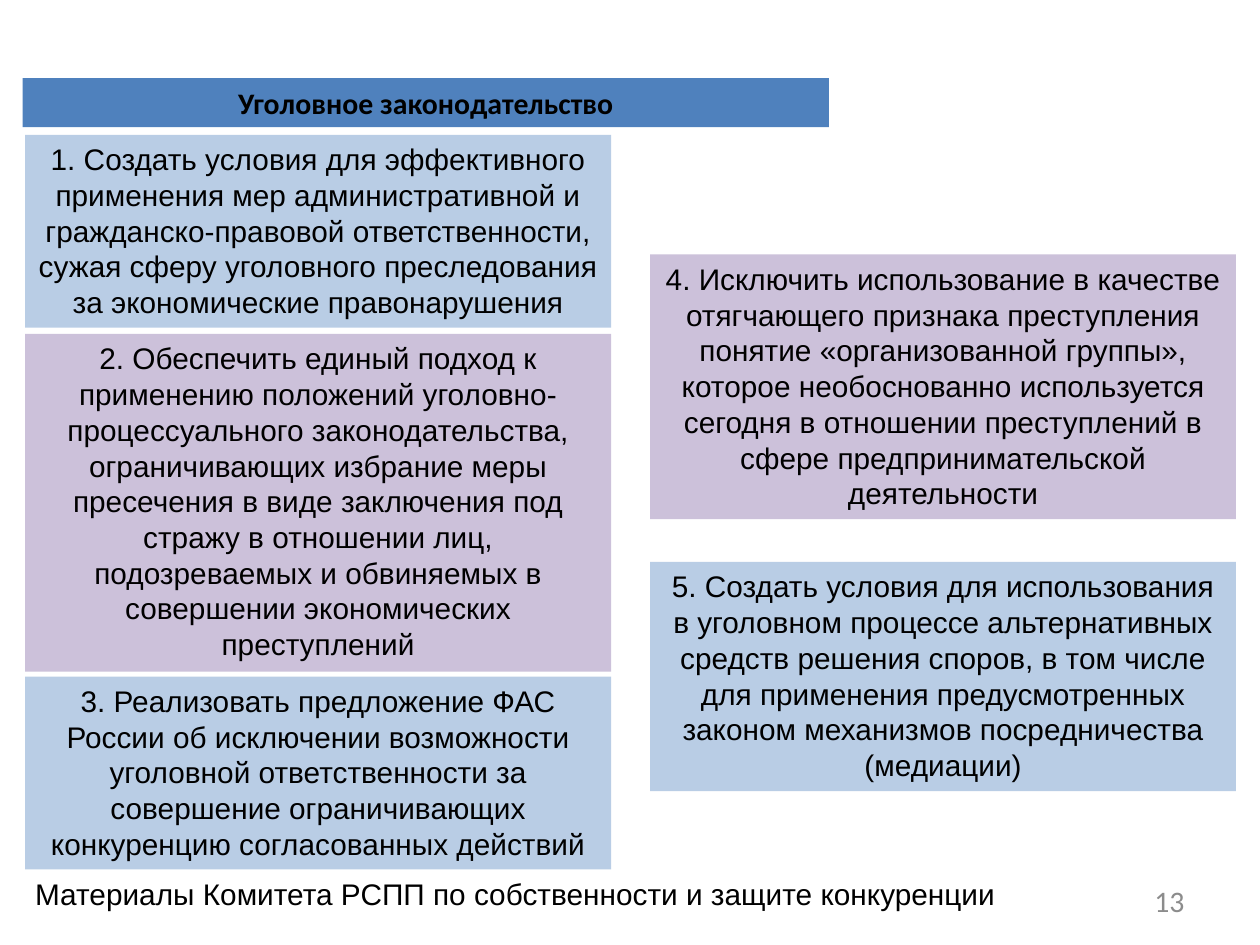
from dataclasses import dataclass
from typing import Optional

from pptx import Presentation
from pptx.dml.color import RGBColor
from pptx.enum import text
from pptx.util import Inches, Pt

BLACK = RGBColor(0x00, 0x00, 0x00)
GRAY = RGBColor(0x8C, 0x8C, 0x8C)
HEADER_BLUE = RGBColor(0x4F, 0x81, 0xBD)
LIGHT_BLUE = RGBColor(0xB9, 0xCD, 0xE5)
LILAC = RGBColor(0xCC, 0xC1, 0xDA)

CENTER = text.PP_ALIGN.CENTER
LEFT_COL, RIGHT_COL, COL_WIDTH = 0.2, 5.16, 4.65


@dataclass
class Box:
    left: float
    top: float
    width: float
    height: float
    words: str
    fill: Optional[RGBColor] = None
    align: text.PP_ALIGN = CENTER
    anchor: text.MSO_ANCHOR = text.MSO_ANCHOR.TOP
    font: str = "Arial"
    color: RGBColor = BLACK
    bold: bool = False


def proposal(left: float, top: float, height: float, fill: RGBColor, words: str) -> Box:
    return Box(left, top, COL_WIDTH, height, words, fill)


BOXES = [
    Box(0.18, 0.62, 6.4, 0.39, "Уголовное законодательство", HEADER_BLUE,
        font="Calibri", bold=True),
    proposal(LEFT_COL, 1.07, 1.53, LIGHT_BLUE,
             "1. Создать условия для эффективного применения мер административной и "
             "гражданско-правовой ответственности, сужая сферу уголовного преследования "
             "за экономические правонарушения"),
    proposal(LEFT_COL, 2.65, 2.68, LILAC,
             "2. Обеспечить единый подход к применению положений "
             "уголовно-процессуального законодательства, ограничивающих избрание меры "
             "пресечения в виде заключения под стражу в отношении лиц, подозреваемых и "
             "обвиняемых в совершении экономических преступлений"),
    proposal(LEFT_COL, 5.37, 1.53, LIGHT_BLUE,
             "3. Реализовать предложение ФАС России об исключении возможности уголовной "
             "ответственности за совершение ограничивающих конкуренцию согласованных "
             "действий"),
    proposal(RIGHT_COL, 2.02, 2.1, LILAC,
             "4. Исключить использование в качестве отягчающего признака преступления "
             "понятие «организованной группы», которое необоснованно используется "
             "сегодня в отношении преступлений в сфере предпринимательской деятельности"),
    proposal(RIGHT_COL, 4.46, 1.82, LIGHT_BLUE,
             "5. Создать условия для использования в уголовном процессе альтернативных "
             "средств решения споров, в том числе для применения предусмотренных законом "
             "механизмов посредничества (медиации)"),
    Box(7.17, 6.95, 2.33, 0.4, "13", align=text.PP_ALIGN.RIGHT,
        anchor=text.MSO_ANCHOR.MIDDLE, font="Calibri", color=GRAY),
    Box(0.18, 6.9, 9.61, 0.39,
        "Материалы Комитета РСПП по собственности и защите конкуренции",
        align=text.PP_ALIGN.LEFT),
]


def draw_box(s, box: Box) -> None:
    sp = s.shapes.add_textbox(Inches(box.left), Inches(box.top),
                              Inches(box.width), Inches(box.height))
    if box.fill is not None:
        sp.fill.solid()
        sp.fill.fore_color.rgb = box.fill
    tf = sp.text_frame
    tf.word_wrap = True
    tf.vertical_anchor = box.anchor
    tf.text = box.words
    p = tf.paragraphs[0]
    p.alignment = box.align
    font = p.runs[0].font
    font.name = box.font
    font.size = Pt(17)
    font.bold = box.bold
    font.color.rgb = box.color


def main() -> None:
    prs = Presentation()
    prs.slide_width, prs.slide_height = Inches(10), Inches(7.5)
    s = prs.slides.add_slide(prs.slide_layouts[6])
    for box in BOXES:
        draw_box(s, box)
    prs.save("out.pptx")


if __name__ == "__main__":
    main()
